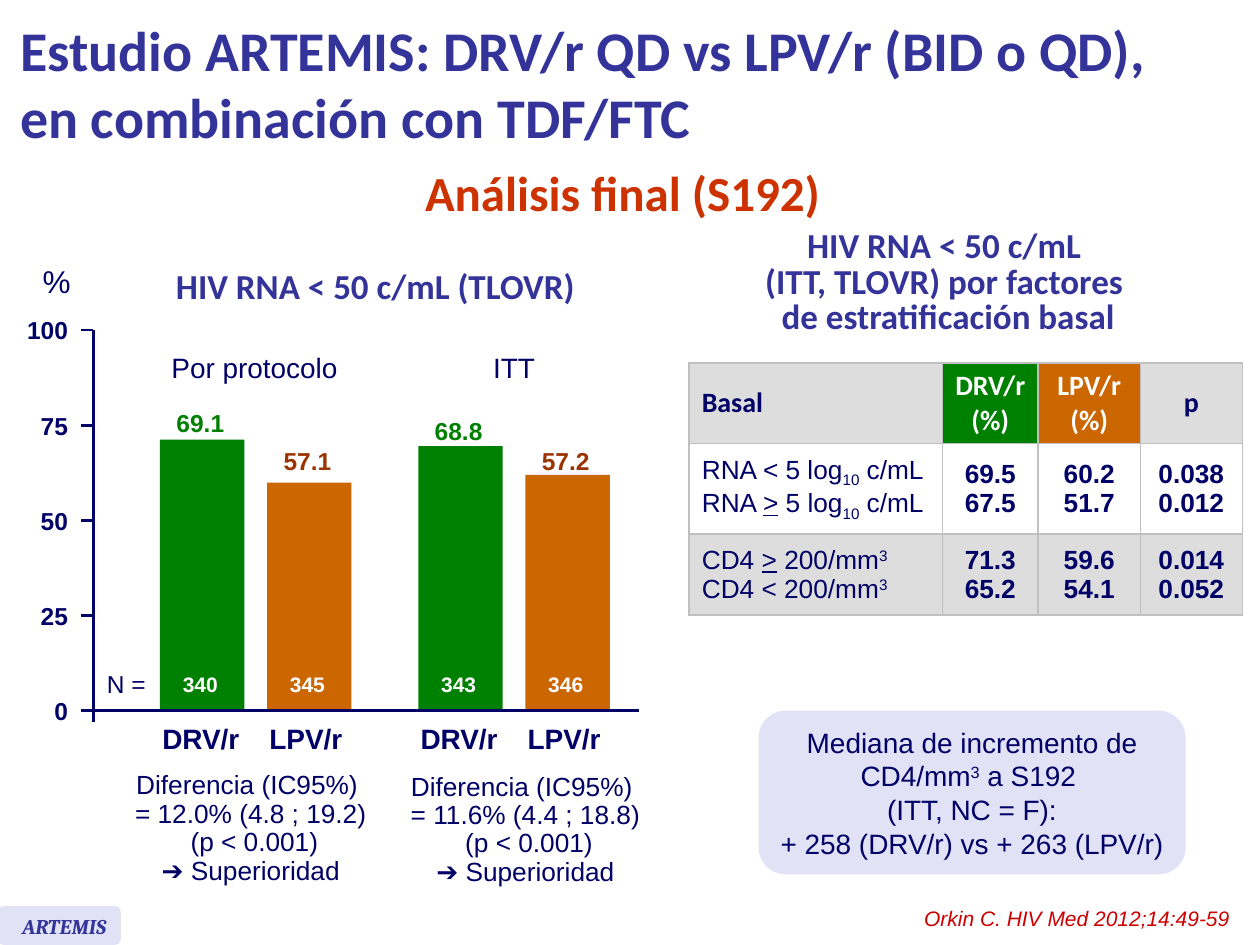
from lxml import etree
from pptx import Presentation
from pptx.dml.color import RGBColor
from pptx.enum.shapes import MSO_CONNECTOR, MSO_SHAPE
from pptx.enum.text import MSO_ANCHOR, MSO_AUTO_SIZE, PP_ALIGN
from pptx.oxml.ns import qn
from pptx.util import Inches, Pt

LEFT, CENTER, RIGHT = PP_ALIGN.LEFT, PP_ALIGN.CENTER, PP_ALIGN.RIGHT
TOP, MIDDLE = MSO_ANCHOR.TOP, MSO_ANCHOR.MIDDLE
RECTANGLE, ROUNDED = MSO_SHAPE.RECTANGLE, MSO_SHAPE.ROUNDED_RECTANGLE

COLORS = {
    "title": "333399", "text": "000066", "heading": "CC3300",
    "citation": "CC0000", "drv": "008000", "lpv": "CC6600",
    "lpv_value": "993300", "panel": "E2E2F6", "gray": "DDDDDD",
    "border": "C0C0C0", "white": "FFFFFF",
}
# Run styles
SUB, SUPER, UNDERLINE = {"baseline": "-25000"}, {"baseline": "30000"}, {"u": "sng"}

AXIS_X, BASE_Y, AXIS_HEIGHT = 0.74, 5.64, 3.02
BAR_WIDTH, BAR_BOTTOM = 0.67, 5.63
FIRST_BAR, BAR_STEP, GROUP_STEP = 1.27, 0.85, 2.05

# Heading, its centre, difference text, its top, bars (value, count, bar top, label top)
BAR_GROUPS = [
    ("Por protocolo", 2.02, "= 12.0% (4.8 ; 19.2)", 6.08,
     [("69.1", "340", 3.49, 3.14), ("57.1", "345", 3.83, 3.44)]),
    ("ITT", 4.08, "= 11.6% (4.4 ; 18.8)", 6.09,
     [("68.8", "343", 3.54, 3.20), ("57.2", "346", 3.77, 3.44)]),
]
ARMS = [("DRV/r", "drv", "drv"), ("LPV/r", "lpv", "lpv_value")]

COLUMN_WIDTHS = [2.01, 0.76, 0.81, 0.81]
ROW_HEIGHTS = [0.64, 0.72, 0.64]
HEADER = [("Basal", "text", "gray"), ("DRV/r\n(%)", "white", "drv"),
          ("LPV/r\n(%)", "white", "lpv"), ("p", "text", "gray")]
BODY = [
    ("white", [
        [[("RNA < 5 log", {}), ("10", SUB), (" c/mL", {})],
         [("RNA ", {}), (">", UNDERLINE), (" 5 log", {}), ("10", SUB), (" c/mL", {})]],
        ["69.5", "67.5"], ["60.2", "51.7"], ["0.038", "0.012"]]),
    ("gray", [
        [[("CD4 ", {}), (">", UNDERLINE), (" 200/mm", {}), ("3", SUPER)],
         [("CD4 < 200/mm", {}), ("3", SUPER)]],
        ["71.3", "65.2"], ["59.6", "54.1"], ["0.014", "0.052"]]),
]


def rgb(name):
    return RGBColor.from_string(COLORS[name])


def write_text(frame, paragraphs, size=16, font="Arial", color="text", bold=False,
               italic=False, align=LEFT, spacing=None):
    """Each paragraph is a string or a list of (text, run style) pairs."""
    for index, content in enumerate(paragraphs):
        paragraph = frame.paragraphs[0] if index == 0 else frame.add_paragraph()
        paragraph.alignment = align
        if spacing:
            paragraph.line_spacing = spacing
        for text, style in [(content, {})] if isinstance(content, str) else content:
            for line_number, line in enumerate(text.split("\n")):
                if line_number:
                    paragraph.add_line_break()
                run = paragraph.add_run()
                run.text = line
                run.font.size, run.font.name = Pt(size), font
                run.font.bold, run.font.italic = bold, italic
                run.font.color.rgb = rgb(color)
                for key, value in style.items():
                    run._r.get_or_add_rPr().set(key, value)


def add_text(slide, box, paragraphs, anchor=TOP, inset=None, wrap=True, **text_format):
    shape = slide.shapes.add_textbox(*map(Inches, box))
    frame = shape.text_frame
    frame.word_wrap = wrap
    frame.vertical_anchor = anchor
    if inset is not None:
        frame.margin_left = frame.margin_right = Inches(inset)
        frame.margin_top = frame.margin_bottom = Inches(inset)
    write_text(frame, paragraphs, **text_format)


def add_block(slide, kind, box, fill):
    shape = slide.shapes.add_shape(kind, *map(Inches, box))
    shape.shadow.inherit = False
    shape.fill.solid()
    shape.fill.fore_color.rgb = rgb(fill)
    shape.line.fill.background()
    return shape


def add_line(slide, x1, y1, x2, y2):
    line = slide.shapes.add_connector(MSO_CONNECTOR.STRAIGHT, *map(Inches, (x1, y1, x2, y2)))
    line.line.color.rgb = rgb("text")
    line.line.width = Pt(1.5)
    etree.SubElement(line._element.spPr, qn("a:effectLst"))


def fill_cell(cell, fill, paragraphs, **text_format):
    cell.vertical_anchor = MIDDLE
    write_text(cell.text_frame, paragraphs, **text_format)
    properties = cell._tc.get_or_add_tcPr()
    for side in ("a:lnL", "a:lnR", "a:lnT", "a:lnB"):
        border = etree.SubElement(properties, qn(side), w=str(Pt(1)))
        solid = etree.SubElement(border, qn("a:solidFill"))
        etree.SubElement(solid, qn("a:srgbClr"), val=COLORS["border"])
    cell.fill.solid()
    cell.fill.fore_color.rgb = rgb(fill)


def add_results_table(slide):
    box = (5.47, 2.88, sum(COLUMN_WIDTHS), sum(ROW_HEIGHTS))
    table = slide.shapes.add_table(3, 4, *map(Inches, box)).table
    for column, width in zip(table.columns, COLUMN_WIDTHS):
        column.width = Inches(width)
    for row, height in zip(table.rows, ROW_HEIGHTS):
        row.height = Inches(height)
    for column, (text, color, fill) in enumerate(HEADER):
        fill_cell(table.cell(0, column), fill, [text], font="Calibri", color=color,
                  bold=True, align=CENTER if column else LEFT)
    for row, (fill, cells) in enumerate(BODY, start=1):
        for column, paragraphs in enumerate(cells):
            fill_cell(table.cell(row, column), fill, paragraphs, size=15,
                      bold=column > 0, align=CENTER if column else LEFT)


def add_axes(slide):
    for value in (0, 25, 50, 75, 100):
        y = BASE_Y - AXIS_HEIGHT * value / 100
        add_line(slide, 0.64, y, AXIS_X if value else 5.07, y)
        add_text(slide, (0.14, y - 0.12, 0.4, 0.24), [str(value)], anchor=MIDDLE,
                 inset=0, size=14, bold=True, align=RIGHT)
    add_line(slide, AXIS_X, BASE_Y - AXIS_HEIGHT, AXIS_X, 5.73)
    add_text(slide, (0.24, 2.03, 0.42, 0.4), ["%"], wrap=False, size=18)
    add_text(slide, (0.75, 5.26, 0.56, 0.33), ["N ="], size=14)


def add_bar_groups(slide):
    for group, (heading, center, difference, difference_top, bars) in enumerate(BAR_GROUPS):
        add_text(slide, (center - 0.8, 2.73, 1.6, 0.37), [heading], align=CENTER)
        for arm, (value, count, bar_top, label_top) in enumerate(bars):
            name, fill, value_color = ARMS[arm]
            left = FIRST_BAR + group * GROUP_STEP + arm * BAR_STEP
            add_block(slide, RECTANGLE, (left, bar_top, BAR_WIDTH, BAR_BOTTOM - bar_top), fill)
            add_text(slide, (left + 0.03, label_top, 0.58, 0.44), [value], inset=0.1,
                     wrap=False, size=14, color=value_color, bold=True, align=CENTER)
            add_text(slide, (left + 0.08, 5.28, 0.48, 0.3), [count], wrap=False,
                     size=12, color="white", bold=True, align=CENTER)
            add_text(slide, (left - 0.08, 5.68, 0.9, 0.37), [name], bold=True)
        add_text(slide, (0.94 + group * 2.18, difference_top, 2.1, 1.01),
                 ["Diferencia (IC95%) ", difference, " (p < 0.001)", "➔ Superioridad"],
                 wrap=False, size=15, align=CENTER, spacing=0.9)


def add_title(slide):
    title = slide.shapes.title
    title.left, title.top, title.width, title.height = map(Inches, (0.06, 0.05, 9.94, 1.21))
    title.text_frame.auto_size = MSO_AUTO_SIZE.NONE
    title.text_frame.vertical_anchor = MIDDLE
    write_text(title.text_frame,
               ["Estudio ARTEMIS: DRV/r QD vs LPV/r (BID o QD),\nen combinación con TDF/FTC"],
               size=32, font="Calibri", color="title", bold=True)


def main():
    presentation = Presentation()
    presentation.slide_width, presentation.slide_height = Inches(10), Inches(7.5)
    slide = presentation.slides.add_slide(presentation.slide_layouts[5])

    # Title and headings
    add_title(slide)
    add_text(slide, (3.25, 1.24, 3.47, 0.57), ["Análisis final (S192) "], wrap=False,
             size=28, font="Calibri", color="heading", bold=True, align=CENTER)
    section = {"anchor": MIDDLE, "size": 20, "font": "Calibri", "color": "title",
               "bold": True, "align": CENTER}
    add_text(slide, (1.17, 2.11, 3.62, 0.38), ["HIV RNA < 50 c/mL (TLOVR)"],
             spacing=0.8, **section)
    add_text(slide, (5.47, 1.77, 4.11, 0.96),
             ["HIV RNA < 50 c/mL \n(ITT, TLOVR) por factores \nde estratificación basal"],
             spacing=0.85, **section)

    # Bars and table
    add_bar_groups(slide)
    add_axes(slide)
    add_results_table(slide)

    # CD4 summary panel
    panel = add_block(slide, ROUNDED, (6.02, 5.64, 3.39, 1.3), "panel")
    panel.text_frame.word_wrap = True
    panel.text_frame.vertical_anchor = MIDDLE
    write_text(panel.text_frame,
               [[("Mediana de incremento de CD4/mm", {}), ("3", SUPER),
                 (" a S192 \n (ITT, NC = F): ", {})],
                "+ 258 (DRV/r) vs + 263 (LPV/r)"], align=CENTER)

    # Study tag and citation
    add_block(slide, ROUNDED, (-0.02, 7.19, 0.98, 0.31), "panel")
    add_text(slide, (0.08, 7.2, 0.93, 0.3), ["ARTEMIS"], size=12, font="Cambria",
             color="title", bold=True, italic=True)
    add_text(slide, (6.86, 7.14, 3, 0.3), ["Orkin C. HIV Med 2012;14:49-59"],
             size=12, color="citation", italic=True, align=RIGHT)

    presentation.save("out.pptx")


if __name__ == "__main__":
    main()
